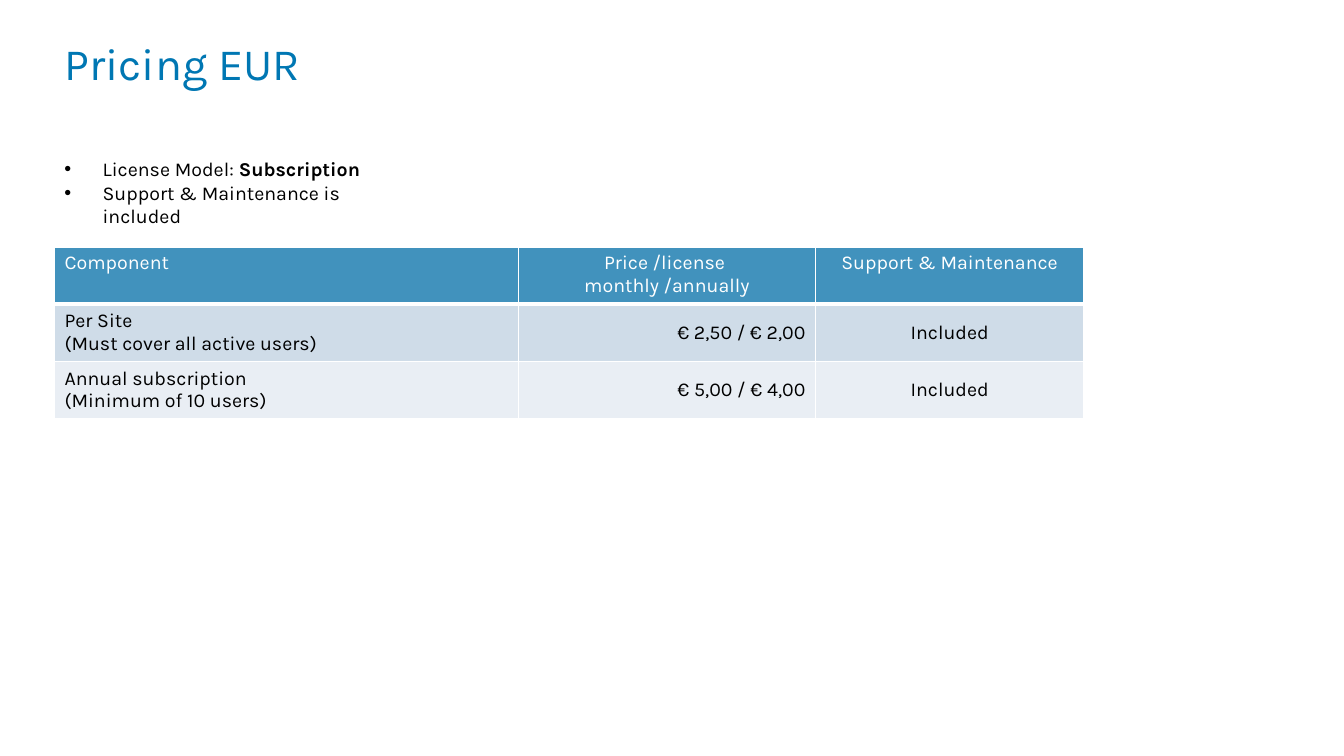
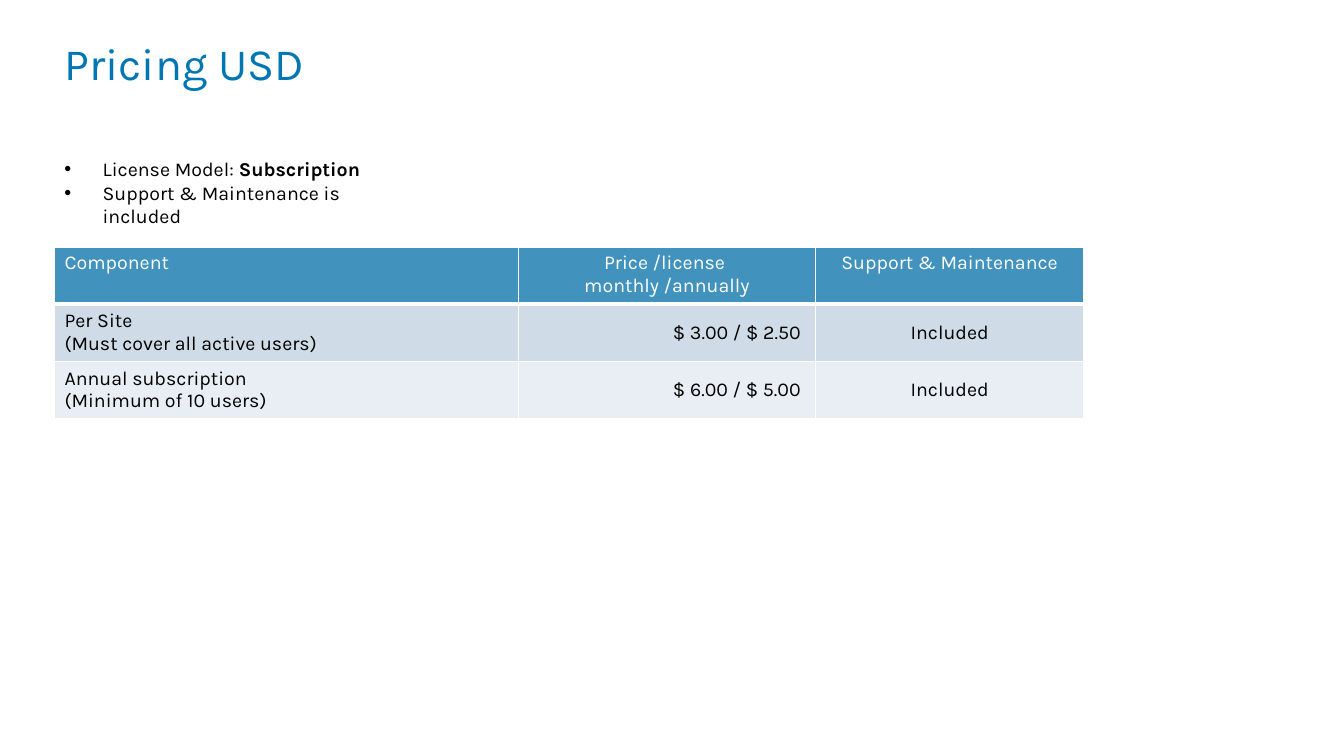
from dataclasses import dataclass

from lxml import etree
from pptx import Presentation
from pptx.dml.color import RGBColor as RGB
from pptx.enum.text import MSO_ANCHOR as Anchor, PP_ALIGN as Align
from pptx.oxml.ns import qn
from pptx.util import Inches, Pt


@dataclass(frozen=True)
class Theme:
    font: str = "Karla"
    title_size: int = 32
    body_size: int = 14
    title: str = "0077B3"
    text: str = "000000"
    white: str = "FFFFFF"
    header: str = "4192BD"
    bands: tuple = ("CFDCE8", "E9EEF4")
    thin: int = 1
    thick: int = 3


THEME = Theme()
LEFT = 0.54
COL_WIDTHS = (4.6, 2.95, 2.66)
COL_ALIGNS = (Align.LEFT, Align.RIGHT, Align.CENTER)
HEADER_ALIGNS = (Align.LEFT, Align.CENTER, Align.CENTER)
HEADERS = ("Component", ("Price /license ", "monthly /annually"), "Support & Maintenance")
COMPONENTS = (
    "Per Site\n(Must cover all active users)",
    "Annual subscription\n(Minimum of 10 users)",
)
TERMS = (
    (("License Model: ", False), ("Subscription", True)),
    (("Support & Maintenance is included", False),),
)
PRICES = {
    "Pricing EUR": ("€ 2,50 / € 2,00", "€ 5,00 / € 4,00"),
    "Pricing USD": ("$ 3.00 / $ 2.50 ", "$ 6.00 / $ 5.00 "),
}


def add_run(p, text, size, color, bold=False):
    r = p.add_run()
    r.text = text
    r.font.name = THEME.font
    r.font.size = Pt(size)
    r.font.bold = bold
    r.font.color.rgb = RGB.from_string(color)


def next_paragraph(tf, index):
    return tf.add_paragraph() if index else tf.paragraphs[0]


def add_title(s, text):
    sp = s.shapes.title
    sp.left, sp.top = Inches(LEFT), Inches(0.36)
    sp.width, sp.height = Inches(12.25), Inches(0.6)
    tf = sp.text_frame
    tf.vertical_anchor = Anchor.TOP
    p = tf.paragraphs[0]
    p.alignment = Align.LEFT
    p.line_spacing = 0.9
    add_run(p, text, THEME.title_size, THEME.title)


def set_bullet(p, indent):
    pPr = p._p.get_or_add_pPr()
    pPr.set("marL", str(Inches(indent)))
    pPr.set("indent", str(-Inches(indent)))
    etree.SubElement(pPr, qn("a:buFont"), typeface="Arial")
    etree.SubElement(pPr, qn("a:buChar"), char="•")


def add_bullets(s, items):
    sp = s.shapes.add_textbox(Inches(LEFT), Inches(1.51), Inches(3.73), Inches(0.81))
    tf = sp.text_frame
    tf.word_wrap = True
    for i, runs in enumerate(items):
        p = next_paragraph(tf, i)
        set_bullet(p, 0.38)
        for text, bold in runs:
            add_run(p, text, THEME.body_size, THEME.text, bold)


def set_borders(cell, top, bottom):
    tcPr = cell._tc.get_or_add_tcPr()
    widths = {"a:lnL": THEME.thin, "a:lnR": THEME.thin, "a:lnT": top, "a:lnB": bottom}
    for tag, width in widths.items():
        ln = etree.SubElement(tcPr, qn(tag), w=str(Pt(width)))
        fill = etree.SubElement(ln, qn("a:solidFill"))
        etree.SubElement(fill, qn("a:srgbClr"), val=THEME.white)


def fill_cell(cell, content, align, color, fill, anchor):
    cell.fill.solid()
    cell.fill.fore_color.rgb = RGB.from_string(fill)
    cell.vertical_anchor = anchor
    paragraphs = (content,) if isinstance(content, str) else content
    for i, text in enumerate(paragraphs):
        p = next_paragraph(cell.text_frame, i)
        p.alignment = align
        for j, line in enumerate(text.split("\n")):
            if j:
                p.add_line_break()
            add_run(p, line, THEME.body_size, color)


def add_price_table(s, prices):
    rows = [HEADERS] + [(name, price, "Included") for name, price in zip(COMPONENTS, prices)]
    frame = s.shapes.add_table(len(rows), len(COL_WIDTHS), Inches(LEFT), Inches(2.45),
                               Inches(sum(COL_WIDTHS)), Inches(1.7))
    table = frame.table
    table.first_row = table.horz_banding = False
    for col, width in zip(table.columns, COL_WIDTHS):
        col.width = Inches(width)
    for i, row in enumerate(rows):
        if i == 0:
            aligns, color, fill, anchor = HEADER_ALIGNS, THEME.white, THEME.header, Anchor.TOP
        else:
            fill = THEME.bands[(i - 1) % len(THEME.bands)]
            aligns, color, anchor = COL_ALIGNS, THEME.text, Anchor.MIDDLE
        top = THEME.thick if i == 1 else THEME.thin
        bottom = THEME.thick if i == 0 else THEME.thin
        for j, (content, align) in enumerate(zip(row, aligns)):
            cell = table.cell(i, j)
            set_borders(cell, top, bottom)
            fill_cell(cell, content, align, color, fill, anchor)


def main():
    prs = Presentation()
    prs.slide_width, prs.slide_height = Inches(13.33), Inches(7.5)
    for title, prices in PRICES.items():
        s = prs.slides.add_slide(prs.slide_layouts[5])
        add_title(s, title)
        add_bullets(s, TERMS)
        add_price_table(s, prices)
    prs.save("out.pptx")


if __name__ == "__main__":
    main()
